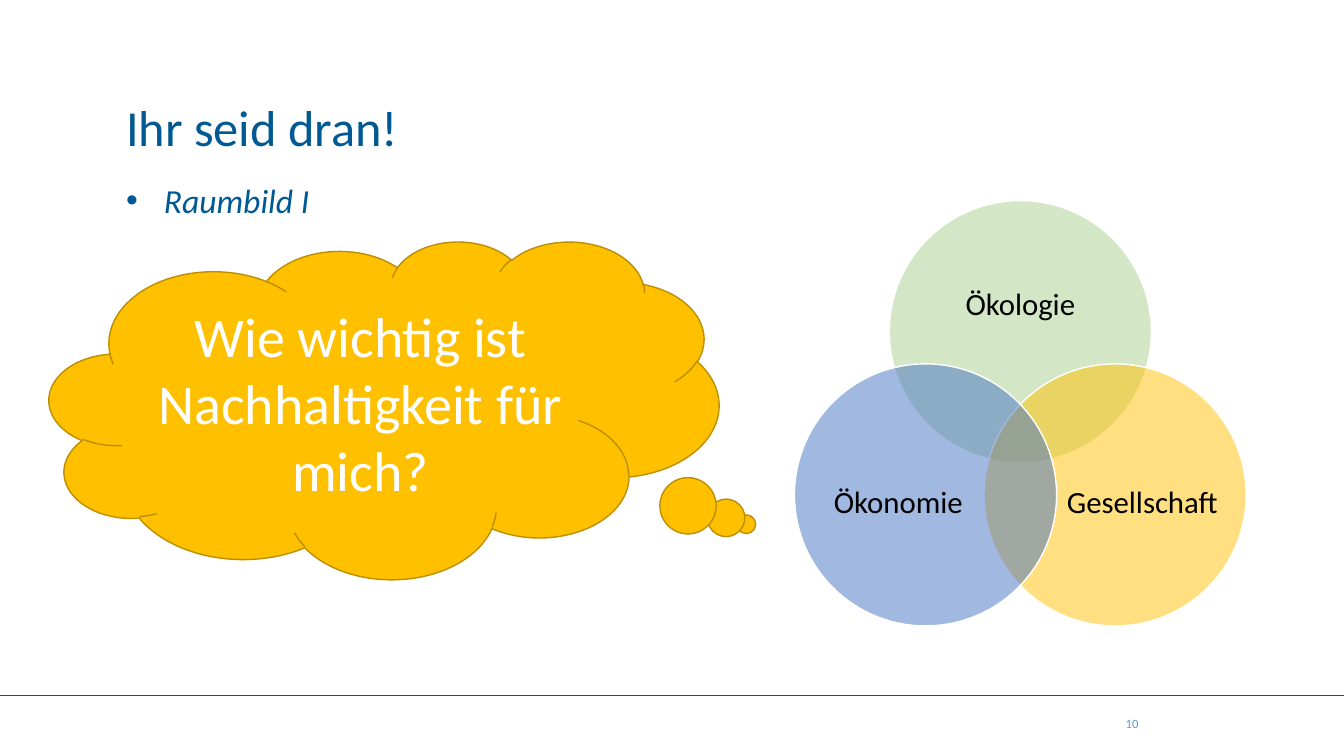
from pptx import Presentation
from pptx.dml.color import RGBColor
from pptx.enum.shapes import MSO_CONNECTOR, MSO_SHAPE
from pptx.enum.text import MSO_ANCHOR, MSO_AUTO_SIZE, PP_ALIGN
from pptx.oxml.ns import qn
from pptx.util import Inches, Pt
from lxml.etree import SubElement

COLORS = {
    "navy": "005993",
    "sky": "5B9BD5",
    "gold": "FFC000",
    "bronze": "BD8E00",
    "green": "A9D18E",
    "blue": "4472C4",
    "white": "FFFFFF",
    "black": "000000",
}


def rgb(name):
    return RGBColor.from_string(COLORS[name])


def write(shape, text, size, color, align=PP_ALIGN.LEFT, anchor=MSO_ANCHOR.TOP):
    """Fill a shape with one formatted paragraph and return its font."""
    frame = shape.text_frame
    frame.text = text
    frame.word_wrap = True
    frame.auto_size = MSO_AUTO_SIZE.NONE
    frame.vertical_anchor = anchor
    para = frame.paragraphs[0]
    para.alignment = align
    para.space_before = Pt(0)
    font = para.runs[0].font
    font.name = "Calibri"
    font.size = Pt(size)
    font.color.rgb = rgb(color)
    return font


prs = Presentation()
prs.slide_width = Inches(13.33)
prs.slide_height = Inches(7.5)
slide = prs.slides.add_slide(prs.slide_layouts[1])
shapes = slide.shapes

# Footer rule and page number
rule = shapes.add_connector(
    MSO_CONNECTOR.STRAIGHT, 0, Inches(6.9), prs.slide_width, Inches(6.9))
rule.line.color.rgb = rgb("navy")
rule.line.width = Pt(0.5)
SubElement(rule._element.spPr, qn("a:effectLst"))

page = shapes.add_textbox(Inches(10.64), Inches(6.98), Inches(0.75), Inches(0.4))
write(page, "10", 9, "sky", PP_ALIGN.RIGHT, MSO_ANCHOR.MIDDLE)

# Title and subtitle
title, body = shapes.title, slide.placeholders[1]
for holder, top in ((title, 0.9), (body, 1.73)):
    holder.left, holder.top = Inches(1.15), Inches(top)
    holder.width, holder.height = Inches(9.4), Inches(0.75)
write(title, "Ihr seid dran!", 36, "navy")
props = body.text_frame.paragraphs[0]._p.get_or_add_pPr()
props.set("marL", "0")
props.set("indent", "0")
SubElement(props, qn("a:buNone"))
write(body, "Raumbild I", 24, "navy").italic = True

# Thought cloud
cloud = shapes.add_shape(
    MSO_SHAPE.CLOUD_CALLOUT, Inches(0.49), Inches(2.39), Inches(6.64), Inches(3.35))
cloud.adjustments[0] = 0.541
cloud.adjustments[1] = 0.339
cloud.shadow.inherit = False
cloud.fill.solid()
cloud.fill.fore_color.rgb = rgb("gold")
cloud.line.color.rgb = rgb("bronze")
cloud.line.width = Pt(1)
write(cloud, "Wie wichtig ist Nachhaltigkeit für mich?", 40, "white",
      PP_ALIGN.CENTER, MSO_ANCHOR.MIDDLE)

# Venn diagram: circle left and top, colour, label text and box
SIZE = Inches(2.6)
VENN = (
    (8.82, 1.99, "green", "Ökologie", (9.17, 2.45, 1.9, 1.17)),
    (9.76, 3.61, "gold", "Gesellschaft", (10.55, 4.28, 1.56, 1.43)),
    (7.88, 3.61, "blue", "Ökonomie", (8.13, 4.28, 1.56, 1.43)),
)
venn = shapes.add_group_shape().shapes
for left, top, color, text, box in VENN:
    disc = venn.add_shape(MSO_SHAPE.OVAL, Inches(left), Inches(top), SIZE, SIZE)
    disc.shadow.inherit = False
    disc.fill.solid()
    disc.fill.fore_color.rgb = rgb(color)
    tint = disc._element.spPr.find(qn("a:solidFill"))[0]
    SubElement(tint, qn("a:alpha"), val="50000")
    disc.line.color.rgb = rgb("white")
    disc.line.width = Pt(1)

    label = venn.add_textbox(*map(Inches, box))
    frame = label.text_frame
    frame.margin_left = frame.margin_right = 0
    frame.margin_top = frame.margin_bottom = 0
    write(label, text, 22, "black", PP_ALIGN.CENTER, MSO_ANCHOR.MIDDLE)
    frame.paragraphs[0].line_spacing = 0.9

prs.save("out.pptx")
